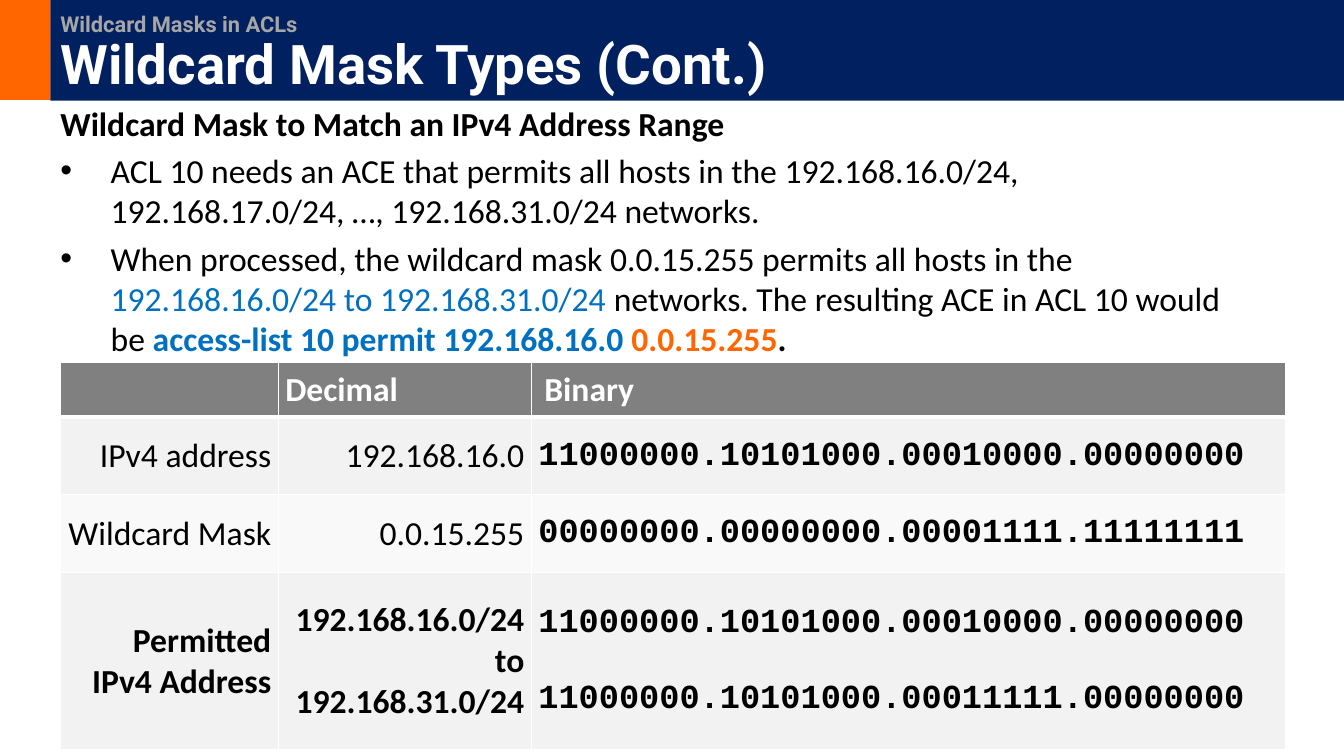
from copy import deepcopy

from lxml import etree
from pptx import Presentation
from pptx.dml.color import RGBColor
from pptx.enum.shapes import MSO_SHAPE
from pptx.enum.text import MSO_ANCHOR, PP_ALIGN
from pptx.oxml.ns import qn
from pptx.util import Inches, Pt

RECT = MSO_SHAPE.RECTANGLE
TOP, MIDDLE, BOTTOM = MSO_ANCHOR.TOP, MSO_ANCHOR.MIDDLE, MSO_ANCHOR.BOTTOM
LEFT, RIGHT = PP_ALIGN.LEFT, PP_ALIGN.RIGHT

ORANGE = RGBColor(0xFF, 0x66, 0x00)
NAVY = RGBColor(0x00, 0x20, 0x60)
BLUE = RGBColor(0x00, 0x70, 0xC0)
BLACK = RGBColor(0x00, 0x00, 0x00)
WHITE = RGBColor(0xFF, 0xFF, 0xFF)
SILVER = RGBColor(0xA6, 0xA6, 0xA6)
GRAY = RGBColor(0x80, 0x80, 0x80)
PALE = RGBColor(0xF2, 0xF2, 0xF2)
LIGHT = RGBColor(0xF9, 0xF9, 0xF9)

SANS, MONO, HEAD = "Calibri", "Courier New", "Roboto"
SIZE = 24
UNIT = 0.5
SPANS = (4.32, 5.02, 14.96)
ROWS = (
    (1.08, GRAY, False, ("", "Decimal", "Binary")),
    (1.54, PALE, False, ("IPv4 address", "192.168.16.0",
                         "11000000.10101000.00010000.00000000")),
    (1.54, LIGHT, False, ("Wildcard Mask", "0.0.15.255",
                          "00000000.00000000.00001111.11111111")),
    (3.52, PALE, True, ("Permitted IPv4 Address",
                        "192.168.16.0/24\nto\n192.168.31.0/24",
                        "11000000.10101000.00010000.00000000\n\n"
                        "11000000.10101000.00011111.00000000")),
)
NOTES = (
    (False, (("Wildcard Mask to Match an IPv4 Address Range", BLACK, True),)),
    (True, (("ACL 10 needs an ACE that permits all hosts in the 192.168.16.0/24, "
             "192.168.17.0/24, …, 192.168.31.0/24 networks.", BLACK, False),)),
    (True, (("When processed, the wildcard mask 0.0.15.255 permits all hosts in the ",
             BLACK, False),
            ("192.168.16.0/24 to 192.168.31.0/24", BLUE, False),
            (" networks. The resulting ACE in ACL 10 would be ", BLACK, False),
            ("access-list 10 permit 192.168.16.0 ", BLUE, True),
            ("0.0.15.255", ORANGE, True),
            (".", BLACK, True))),
)


def grid(*cells):
    return [Inches(cell * UNIT) for cell in cells]


def add_run(para, text, color, bold, size=SIZE, font=SANS):
    for i, part in enumerate(text.split("\n")):
        if i:
            para.add_line_break()
            para._p[-1].append(deepcopy(run._r.rPr))
        run = para.add_run()
        run.text = part
        run.font.name = font
        run.font.size = Pt(size)
        run.font.bold = bold
        run.font.color.rgb = color


def add_rect(slide, area, color):
    rect = slide.shapes.add_shape(RECT, *grid(*area))
    rect.shadow.inherit = False
    rect.fill.solid()
    rect.fill.fore_color.rgb = color
    rect.line.fill.background()
    return rect


def add_title(slide):
    frame = add_rect(slide, (1, 0, 25.66, 2), NAVY).text_frame
    frame.word_wrap = True
    frame.vertical_anchor = BOTTOM
    para = frame.paragraphs[0]
    para.alignment = LEFT
    para.line_spacing = 0.9
    add_run(para, "Wildcard Masks in ACLs\n", SILVER, True, 15.6, HEAD)
    add_run(para, "Wildcard Mask Types (Cont.)", WHITE, True, 39, HEAD)


def add_bullet(para):
    props = para._p.get_or_add_pPr()
    props.set("marL", str(Inches(0.5)))
    props.set("indent", str(Inches(-0.5)))
    etree.SubElement(props, qn("a:buFont")).set("typeface", "Arial")
    etree.SubElement(props, qn("a:buChar")).set("char", "•")


def add_notes(slide):
    frame = slide.shapes.add_textbox(*grid(1, 1.94, 24.14, 5.02)).text_frame
    frame.word_wrap = True
    for i, (bullet, runs) in enumerate(NOTES):
        para = frame.add_paragraph() if i else frame.paragraphs[0]
        para.space_before = Pt(5)
        if bullet:
            add_bullet(para)
        for text, color, bold in runs:
            add_run(para, text, color, bold)


def add_edges(cell, base):
    props = cell._tc.get_or_add_tcPr()
    for i, side in enumerate(("L", "R", "T", "B")):
        line = etree.Element(qn("a:ln" + side))
        line.set("w", str(Pt(base if side == "B" else 1)))
        fill = etree.SubElement(line, qn("a:solidFill"))
        etree.SubElement(fill, qn("a:srgbClr")).set("val", str(WHITE))
        props.insert(i, line)


def fill_cell(cell, text, shade, bold, head, last):
    cell.fill.solid()
    cell.fill.fore_color.rgb = shade
    add_edges(cell, 3 if head else 1)
    side = 0.13 if head and last else 0.07
    cell.margin_left = cell.margin_right = Inches(side)
    cell.margin_top = cell.margin_bottom = Inches(0.07)
    cell.vertical_anchor = TOP if head and last else MIDDLE
    para = cell.text_frame.paragraphs[0]
    para.alignment = LEFT if head or last else RIGHT
    if text:
        add_run(para, text, WHITE if head else BLACK, head or last or bold,
                font=MONO if last and not head else SANS)


def add_grid(slide):
    high = sum(row[0] for row in ROWS)
    area = grid(1.2, 7.2, sum(SPANS), high)
    table = slide.shapes.add_table(len(ROWS), len(SPANS), *area).table
    for col, span in zip(table.columns, grid(*SPANS)):
        col.width = span
    for r, (size, shade, bold, texts) in enumerate(ROWS):
        table.rows[r].height = grid(size)[0]
        for c, text in enumerate(texts):
            fill_cell(table.cell(r, c), text, shade, bold, r == 0,
                      c == len(SPANS) - 1)


def main():
    deck = Presentation()
    deck.slide_width, deck.slide_height = Inches(13.33), Inches(7.5)
    slide = deck.slides.add_slide(deck.slide_layouts[6])
    add_rect(slide, (0, 0, 1, 1.98), ORANGE)
    add_notes(slide)
    add_grid(slide)
    add_title(slide)
    deck.save("out.pptx")


if __name__ == "__main__":
    main()
